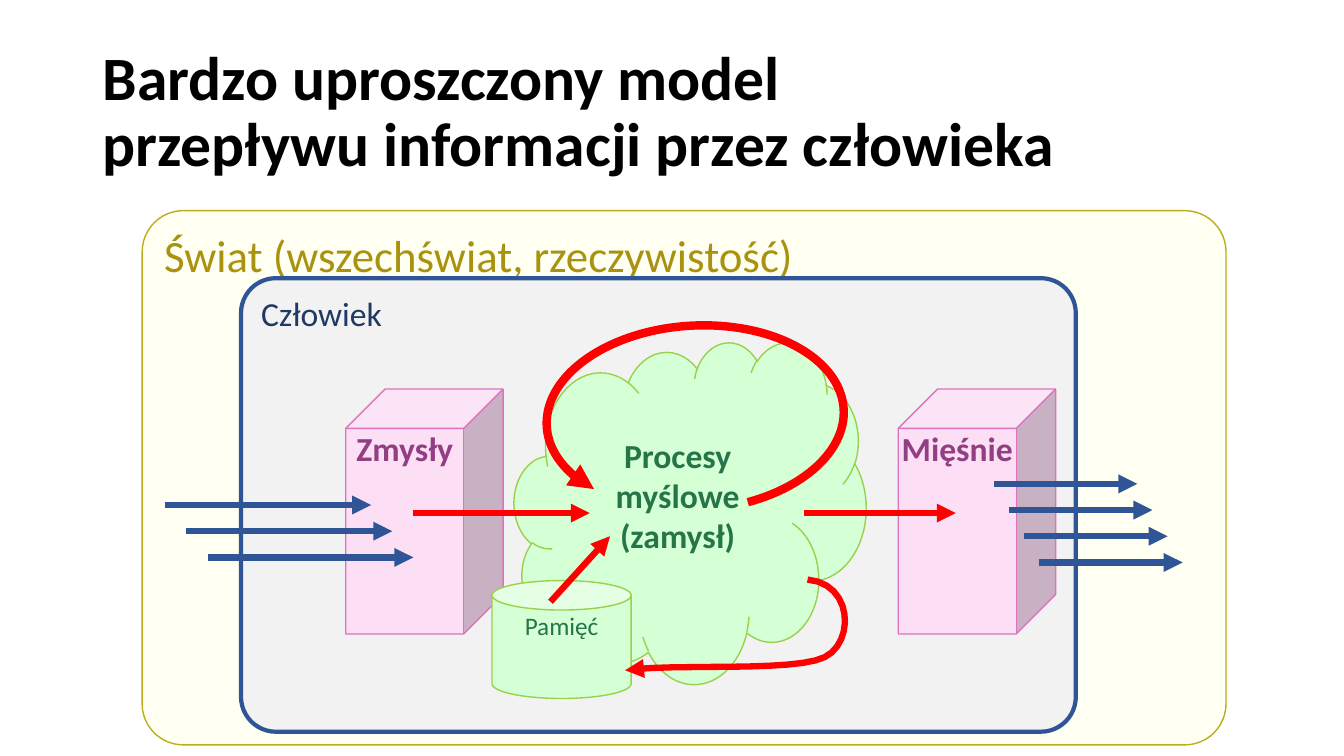
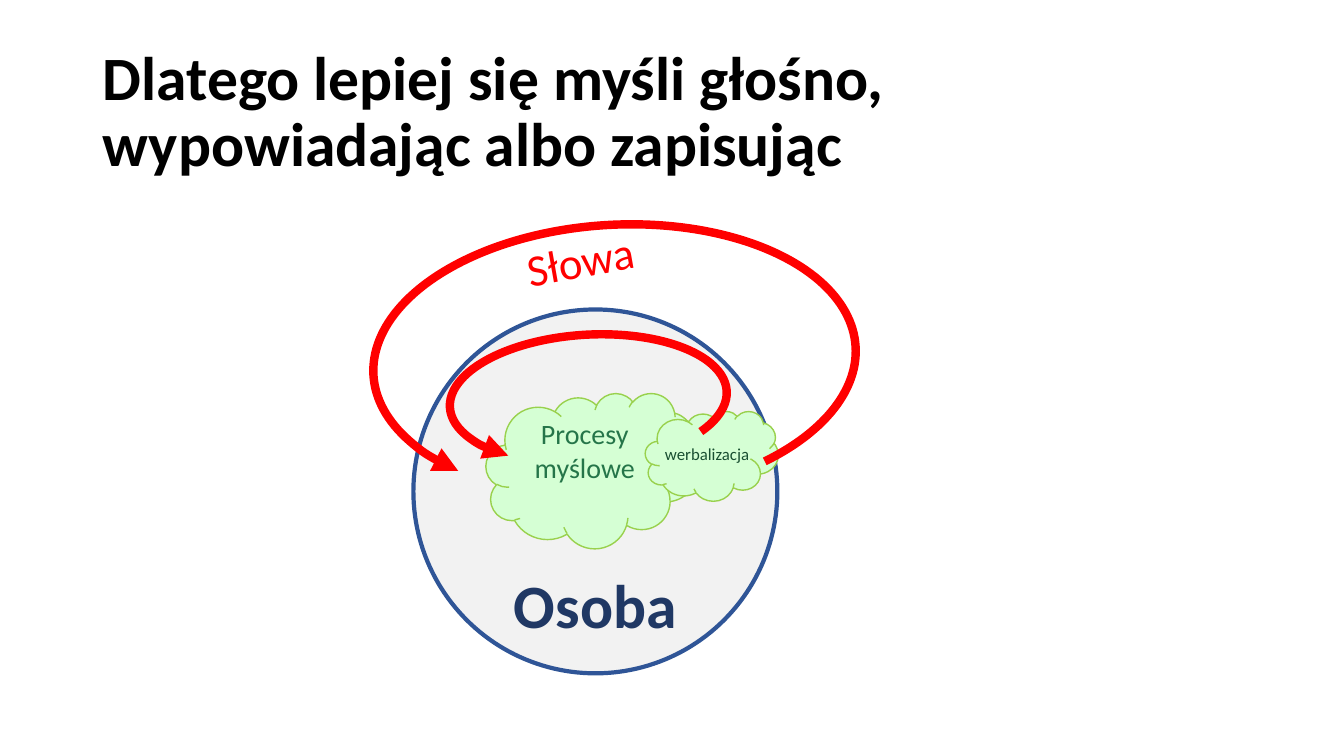
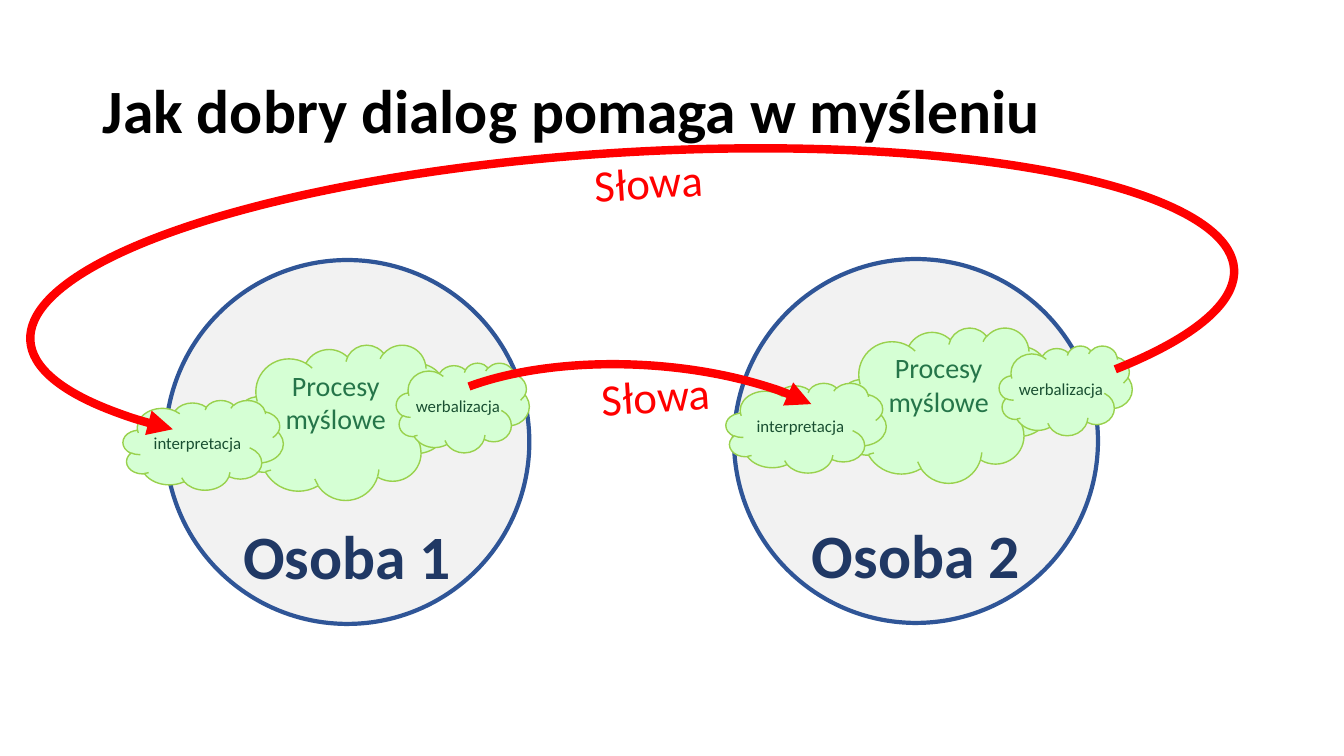
from dataclasses import dataclass

from lxml import etree
from pptx import Presentation
from pptx.dml.color import RGBColor
from pptx.enum.shapes import MSO_CONNECTOR, MSO_SHAPE
from pptx.enum.text import MSO_ANCHOR, MSO_AUTO_SIZE, PP_ALIGN
from pptx.oxml.ns import qn
from pptx.util import Inches, Pt

ROUND, CUBE, CLOUD = MSO_SHAPE.ROUNDED_RECTANGLE, MSO_SHAPE.CUBE, MSO_SHAPE.CLOUD
CAN, OVAL, ARC = MSO_SHAPE.CAN, MSO_SHAPE.OVAL, MSO_SHAPE.ARC
STRAIGHT = MSO_CONNECTOR.STRAIGHT
TOP, MIDDLE = MSO_ANCHOR.TOP, MSO_ANCHOR.MIDDLE
LEFT, CENTER = PP_ALIGN.LEFT, PP_ALIGN.CENTER
FIT_SHAPE = MSO_AUTO_SIZE.SHAPE_TO_FIT_TEXT


@dataclass(frozen=True)
class Theme:
    """Colours, type sizes and line widths of the deck."""
    font: str = "Calibri"
    black: str = "000000"
    red: str = "FF0000"
    navy: str = "203864"
    blue: str = "2F5597"
    grey: str = "F2F2F2"
    cream: str = "FFFFF2"
    gold: str = "BBAD1D"
    gold_text: str = "A9920F"
    pink: str = "FCDEF5"
    pink_line: str = "DD73BC"
    pink_text: str = "923E83"
    green: str = "D5FFD4"
    green_line: str = "99D14D"
    green_text: str = "257549"
    green_dark: str = "194F31"
    title: int = 44
    large: int = 32
    body: int = 24
    medium: int = 20
    small: int = 18
    tiny: int = 12
    thin: float = 1
    frame: float = 3
    arrow: float = 4.5
    loop: float = 6


T = Theme()


def rgb(code):
    """Return a colour from its hex code."""
    return RGBColor.from_string(code)


def write(shape, lines, size, color, bold=False, align=CENTER, anchor=TOP, inset=0, top=None):
    """Write one paragraph per line into a shape and return its text frame."""
    tf = shape.text_frame
    tf.word_wrap = True
    tf.vertical_anchor = anchor
    tf.margin_left = tf.margin_right = Inches(inset)
    tf.margin_top = Inches(inset / 2 if top is None else top)
    tf.margin_bottom = Inches(inset / 2)
    for i, line in enumerate(lines):
        p = tf.add_paragraph() if i else tf.paragraphs[0]
        p.alignment = align
        for j, part in enumerate(line.split("\n")):
            if j:
                p.add_line_break()
            r = p.add_run()
            r.text = part
            r.font.name, r.font.size, r.font.bold = T.font, Pt(size), bold
            r.font.color.rgb = rgb(color)
    return tf


def text_box(s, box, lines, size, color, **style):
    """Add a text box with the usual insets."""
    return write(s.shapes.add_textbox(*map(Inches, box)), lines, size, color,
                 align=LEFT, inset=0.1, **style)


def solid(s, kind, box, fill, line, width=T.thin):
    """Add a filled and outlined preset shape."""
    shape = s.shapes.add_shape(kind, *map(Inches, box))
    shape.shadow.inherit = False
    shape.fill.solid()
    shape.fill.fore_color.rgb = rgb(fill)
    shape.line.color.rgb = rgb(line)
    shape.line.width = Pt(width)
    return shape


def stroke(shape, color, width, end="tailEnd"):
    """Draw a shape's line with a triangular arrowhead at one end."""
    shape.line.color.rgb = rgb(color)
    shape.line.width = Pt(width)
    ln = shape.line._get_or_add_ln()
    etree.SubElement(ln, qn("a:" + end)).set("type", "triangle")


def arrow(s, start, end, color=T.red):
    """Add a straight arrow."""
    line = s.shapes.add_connector(STRAIGHT, *map(Inches, (*start, *end)))
    stroke(line, color, T.arrow)
    etree.SubElement(line._element.spPr, qn("a:effectLst"))


def arrow_stack(s, x, y, count, length, dx, dy):
    """Add parallel arrows, each shifted by the same step."""
    for i in range(count):
        left, level = x + i * dx, y + i * dy
        arrow(s, (left, level), (left + length, level), T.blue)


def loop(s, box, angles, rotation=176.6, end="tailEnd"):
    """Add a curved red arrow along an ellipse."""
    arc = s.shapes.add_shape(ARC, *map(Inches, box))
    arc.shadow.inherit = False
    arc.fill.background()
    arc.adjustments[0], arc.adjustments[1] = angles
    arc.rotation = rotation
    arc._element.spPr.xfrm.set("flipV", "1")
    stroke(arc, T.red, T.loop, end)


def bezier(a, b, c, d, steps=12):
    """Return points along a cubic curve, without its start."""
    points = []
    for i in range(1, steps + 1):
        t = i / steps
        u = 1 - t
        points.append(tuple(u**3 * k + 3 * u * u * t * m + 3 * u * t * t * n + t**3 * o
                            for k, m, n, o in zip(a, b, c, d)))
    return points


def curved_arrow(s, x, y):
    """Add the arrow that bends from the thoughts back to the memory."""
    start, bend, tip = (x, y), (x + 0.17, y + 0.77), (x - 1.81, y + 0.9)
    points = bezier(start, (x + 0.45, y + 0.04), (x + 0.47, y + 0.62), bend)
    points += bezier(bend, (x - 0.13, y + 0.92), (x - 1.35, y + 0.83), tip)
    builder = s.shapes.build_freeform(Inches(x), Inches(y))
    builder.add_line_segments([(Inches(px), Inches(py)) for px, py in points], close=False)
    curve = builder.convert_to_shape()
    curve.shadow.inherit = False
    curve.fill.background()
    stroke(curve, T.red, T.arrow)


def title(s, text):
    """Add the slide title."""
    tf = text_box(s, (0.92, 0.4, 11.5, 1.45), [text], T.title, T.black,
                  bold=True, anchor=MIDDLE)
    tf.paragraphs[0].line_spacing = 0.9


def frame(s, box, label, size, color, fill, line, width):
    """Add a rounded frame with a label in its corner."""
    shape = solid(s, ROUND, box, fill, line, width)
    shape.adjustments[0] = 0.077
    write(shape, [label], size, color, align=LEFT, inset=0.1, top=0.05)


def block(s, x, y, label):
    """Add a pink cube for an organ of the body."""
    cube = solid(s, CUBE, (x, y, 1.56, 2.43), T.pink, T.pink_line)
    write(cube, [label], T.body, T.pink_text, bold=True)


def cloud(s, box, lines, size, color=T.green_text, **style):
    """Add a green cloud with text."""
    write(solid(s, CLOUD, box, T.green, T.green_line), lines, size, color, **style)


def thoughts(s, x, y, interprets):
    """Add the thinking cloud and the smaller clouds attached to it."""
    cloud(s, (x, y, 2.11, 1.54), ["Procesy myślowe"], T.medium)
    cloud(s, (x + 1.58, y + 0.18, 1.32, 0.89), ["werbalizacja"], T.tiny,
          T.green_dark, anchor=MIDDLE)
    if interprets:
        cloud(s, (x - 1.13, y + 0.55, 1.59, 0.89), ["interpretacja"], T.tiny,
              T.green_dark, anchor=MIDDLE)


def person(s, x, y, label, dx, dy, interprets=False):
    """Add a person as a circle with thoughts at an offset inside it."""
    circle = solid(s, OVAL, (x, y, 3.61, 3.61), T.grey, T.blue, T.frame)
    write(circle, [label], T.title, T.navy, bold=True, top=2.03)
    thoughts(s, x + dx, y + dy, interprets)


def words(s, x, y, rotation):
    """Add the slanted caption of a speech arrow."""
    box = s.shapes.add_textbox(*map(Inches, (x, y, 1.29, 0.64)))
    tf = write(box, ["Słowa"], T.large, T.red, align=LEFT, inset=0.1)
    tf.word_wrap = False
    tf.auto_size = FIT_SHAPE
    box.rotation = rotation


def model_slide(s):
    """Build the model of information flow through a human."""
    frame(s, (1.41, 2.09, 10.75, 5.3), "Świat (wszechświat, rzeczywistość)",
          T.large, T.gold_text, T.cream, T.gold, T.thin)
    frame(s, (2.39, 2.76, 8.28, 4.5), "Człowiek",
          T.body, T.navy, T.grey, T.blue, T.frame)
    block(s, 8.91, 3.86, "Mięśnie")
    cloud(s, (5.1, 3.39, 3.49, 3.39), ["Procesy myślowe", "(zamysł)"], T.body,
          bold=True, top=0.41)
    block(s, 3.43, 3.86, "Zmysły")
    arrow_stack(s, 9.86, 4.8, 4, 1.42, 0.15, 0.26)
    arrow_stack(s, 1.64, 5.01, 3, 2.04, 0.21, 0.26)
    arrow(s, (7.97, 5.09), (9.48, 5.09))
    arrow(s, (4.1, 5.09), (5.85, 5.09))
    memory = solid(s, CAN, (4.88, 5.76, 1.38, 1.17), T.green, T.green_line)
    write(memory, ["Pamięć"], T.small, T.green_text)
    curved_arrow(s, 8.01, 5.75)
    title(s, "Bardzo uproszczony model \nprzepływu informacji przez człowieka")
    arrow(s, (5.46, 5.97), (6.05, 5.32))
    loop(s, (5.42, 3.23, 2.95, 1.83), (71.11, 19.07))


def aloud_slide(s):
    """Build the person who thinks aloud."""
    title(s, "Dlatego lepiej się myśli głośno, wypowiadając albo zapisując")
    person(s, 4.1, 3.07, "Osoba", 0.72, 0.83)
    words(s, 5.12, 2.26, 349.8)
    loop(s, (4.46, 3.32, 2.75, 1.28), (96.32, 19.07))
    loop(s, (3.7, 2.23, 4.79, 2.7), (85.69, 19.07))


def dialog_slide(s):
    """Build the dialog between two persons."""
    title(s, "Jak dobry dialog pomaga w myśleniu")
    person(s, 7.28, 2.57, "Osoba 2", 1.05, 0.68, interprets=True)
    words(s, 5.8, 1.48, 356.4)
    words(s, 5.87, 3.6, 356.4)
    person(s, 1.64, 2.58, "Osoba 1", 0.71, 0.84, interprets=True)
    loop(s, (0.29, 1.51, 11.96, 3.03), (101.4, 7.05))
    loop(s, (3.92, 3.62, 4.79, 2.04), (121.81, 202.31), rotation=183, end="headEnd")


def main():
    """Build and save the deck."""
    prs = Presentation()
    prs.slide_width, prs.slide_height = Inches(13.33), Inches(7.5)
    for build in (model_slide, aloud_slide, dialog_slide):
        build(prs.slides.add_slide(prs.slide_layouts[6]))
    prs.save("out.pptx")


if __name__ == "__main__":
    main()
